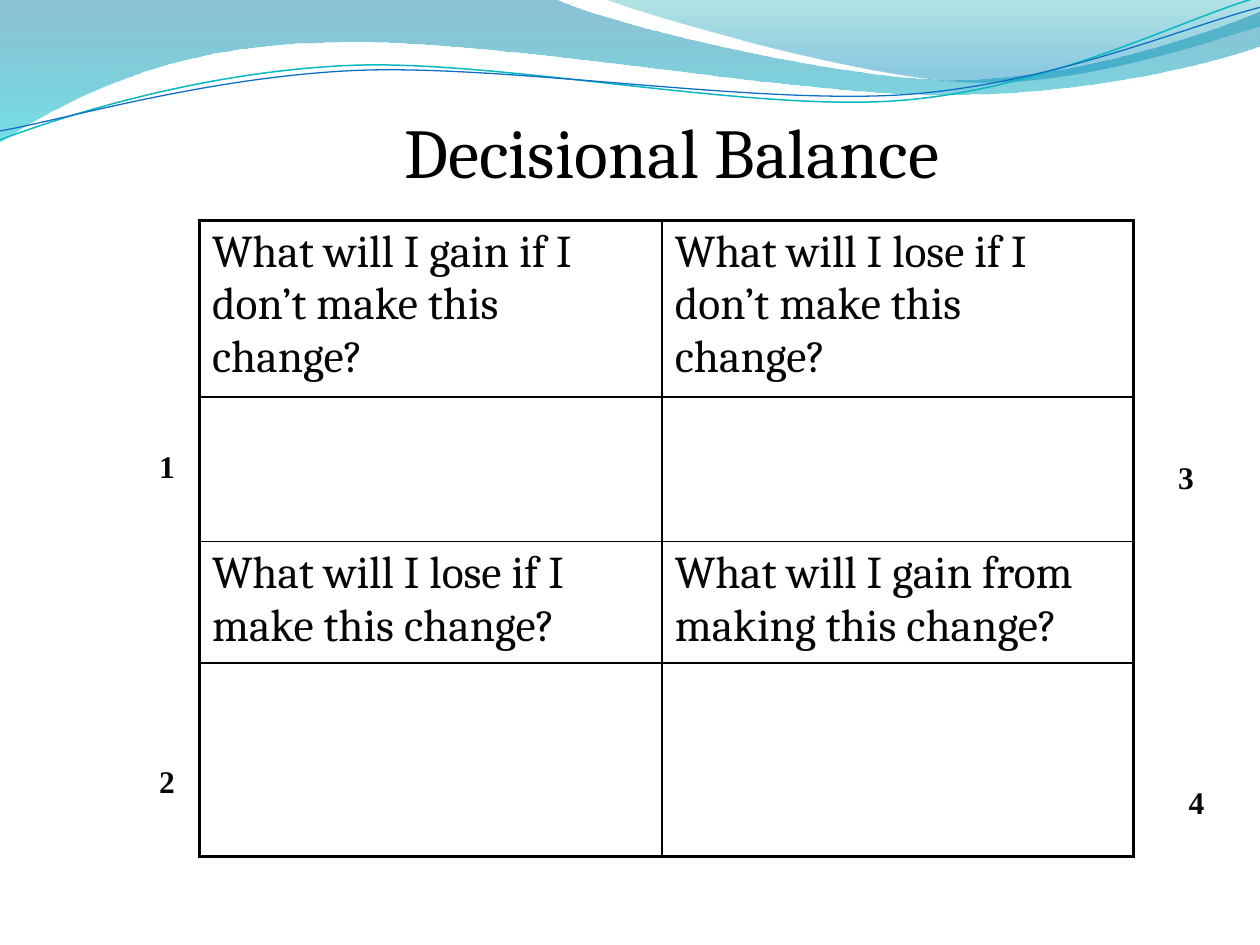
from lxml import etree
from pptx import Presentation
from pptx.dml.color import RGBColor
from pptx.enum.text import MSO_ANCHOR, MSO_AUTO_SIZE, PP_ALIGN
from pptx.oxml.ns import qn
from pptx.util import Cm, Pt

CENTER = PP_ALIGN.CENTER
TOP = MSO_ANCHOR.TOP
NO_FIT = MSO_AUTO_SIZE.NONE

BLACK = RGBColor(0x00, 0x00, 0x00)
INK = RGBColor(0x06, 0x06, 0x06)
DEEP_BLUE = RGBColor(0x00, 0x74, 0xA1)
AQUA = RGBColor(0x00, 0xC6, 0xCF)
TEAL = RGBColor(0x00, 0xA1, 0xA9)
SKY = RGBColor(0x00, 0x8B, 0xBF)
LINE_TEAL = RGBColor(0x0A, 0xB8, 0xBF)
LINE_BLUE = RGBColor(0x0F, 0x6F, 0xC6)


def add_wave(shapes, start, segments, close):
    """Draw straight (x, y) and Bezier (x1, y1, x2, y2, x, y) segments, in cm."""
    points = [(Cm(x), Cm(y)) for seg in segments for x, y in zip(seg[::2], seg[1::2])]
    builder = shapes.build_freeform(Cm(start[0]), Cm(start[1]))
    builder.add_line_segments(points, close=close)
    sp = builder.convert_to_shape()
    sp.shadow.inherit = False
    # Join each three points of a Bezier segment into one curve
    steps = iter(list(sp._element.spPr.iter(qn("a:lnTo"))))
    for seg in segments:
        group = [next(steps) for _ in seg[::2]]
        if len(group) == 3:
            curve = etree.Element(qn("a:cubicBezTo"))
            group[0].addprevious(curve)
            for step in group:
                curve.append(step[0])
                step.getparent().remove(step)
    return sp


def add_border(cell, side, width):
    ln = etree.SubElement(cell._tc.get_or_add_tcPr(), qn(f"a:ln{side}"), w=str(Pt(width)))
    fill = etree.SubElement(ln, qn("a:solidFill"))
    etree.SubElement(fill, qn("a:srgbClr"), val=str(BLACK))


prs = Presentation()
prs.slide_width, prs.slide_height = Cm(25.4), Cm(19.05)
s = prs.slides.add_slide(prs.slide_layouts[5])

# Translucent waves: start, segments, (position, colour, opacity %) stops
waves = [
    ((0, -0.03),
     [(11.18, -0.03), (12.09, 0.43, 16.87, 1.6, 19.25, 1.6),
      (21.67, 1.6, 24.33, 0.66, 25.4, 0.23), (25.43, 0.91),
      (24.97, 1.12, 22.1, 1.93, 18.95, 1.91), (15.8, 1.91, 9.7, 0.71, 6.53, 0.86),
      (3.28, 0.89, 1.17, 2.11, -0.03, 2.87)],
     [(0, DEEP_BLUE, 45), (1, AQUA, 55)]),
    ((12.17, -0.03),
     [(12.93, 0.28, 17.32, 1.57, 19.53, 1.65),
      (21.74, 1.75, 24.41, 0.81, 25.4, 0.53), (25.4, 0)],
     [(0, TEAL, 30), (0.8, SKY, 45)]),
]
for start, segments, stops in waves:
    sp = add_wave(s.shapes, start, segments, True)
    sp.line.fill.background()
    sp.fill.gradient()
    sp.fill.gradient_angle = 270
    for stop, (position, color, _) in zip(sp.fill.gradient_stops, stops):
        stop.position = position
        stop.color.rgb = color
    for clr, (_, _, opacity) in zip(sp._element.spPr.iter(qn("a:srgbClr")), stops):
        etree.SubElement(clr, qn("a:alpha"), val=str(opacity * 1000))

# Thin curved lines
curves = [
    ((0, 2.82),
     [(1.22, 2.36, 4.01, 1.45, 7.04, 1.32), (10.03, 1.19, 15.06, 2.26, 18.11, 2.03),
      (21.16, 1.8, 23.83, 0.38, 25.35, -0.05)], LINE_TEAL, 0.85),
    ((0, 2.64),
     [(1.19, 2.44, 4.17, 1.55, 7.19, 1.42), (10.24, 1.3, 15.16, 2.11, 18.21, 1.91),
      (21.23, 1.7, 23.9, 0.53, 25.4, 0.15)], LINE_BLUE, 0.75),
]
for start, segments, color, width in curves:
    sp = add_wave(s.shapes, start, segments, False)
    sp.fill.background()
    sp.line.color.rgb = color
    sp.line.width = Pt(width)

# Question table
col_widths = [9.33, 9.5]
row_heights = [3.56, 2.92, 2.45, 3.9]
questions = [
    ["What will I gain if I don’t make this change?",
     "What will I lose if I don’t make this change?"],
    ["", ""],
    ["What will I lose if I make this change?",
     "What will I gain from making this change?"],
    ["", ""],
]
table = s.shapes.add_table(4, 2, Cm(4.02), Cm(4.44),
                           Cm(sum(col_widths)), Cm(sum(row_heights))).table
table.first_row = table.horz_banding = False
for col, width in zip(table.columns, col_widths):
    col.width = Cm(width)
for row, height in zip(table.rows, row_heights):
    row.height = Cm(height)
for r, texts in enumerate(questions):
    for c, text in enumerate(texts):
        cell = table.cell(r, c)
        outer = {"L": c == 0, "R": c == 1, "T": r == 0, "B": r == 3}
        for side, is_outer in outer.items():
            add_border(cell, side, 2.25 if is_outer else 1)
        cell.fill.background()
        if text:
            cell.text = text
            p = cell.text_frame.paragraphs[0]
            p.font.name, p.font.size = "Cambria", Pt(26)
            p.font.color.rgb = INK

# Title
title = s.shapes.title
title.left, title.top, title.width, title.height = Cm(6.14), Cm(2.06), Cm(14.81), Cm(1.96)
tf = title.text_frame
tf.text = "Decisional Balance"
tf.auto_size, tf.vertical_anchor = NO_FIT, TOP
p = tf.paragraphs[0]
p.alignment = CENTER
p.font.name, p.font.size = "Cambria", Pt(40)
p.font.color.rgb = BLACK

# Quadrant numbers
numbers = [("1", 2.96, 8.89, 0.71, True), ("2", 2.96, 15.24, 1.24, True),
           ("3", 23.5, 9.1, 0.84, False), ("4", 23.71, 15.67, 0.84, False)]
for text, left, top, width, wrap in numbers:
    tf = s.shapes.add_textbox(Cm(left), Cm(top), Cm(width), Cm(1.02)).text_frame
    tf.word_wrap = wrap
    tf.text = text
    p = tf.paragraphs[0]
    p.font.name, p.font.size, p.font.bold = "Times New Roman", Pt(18), True
    p.font.color.rgb = INK

prs.save("out.pptx")
